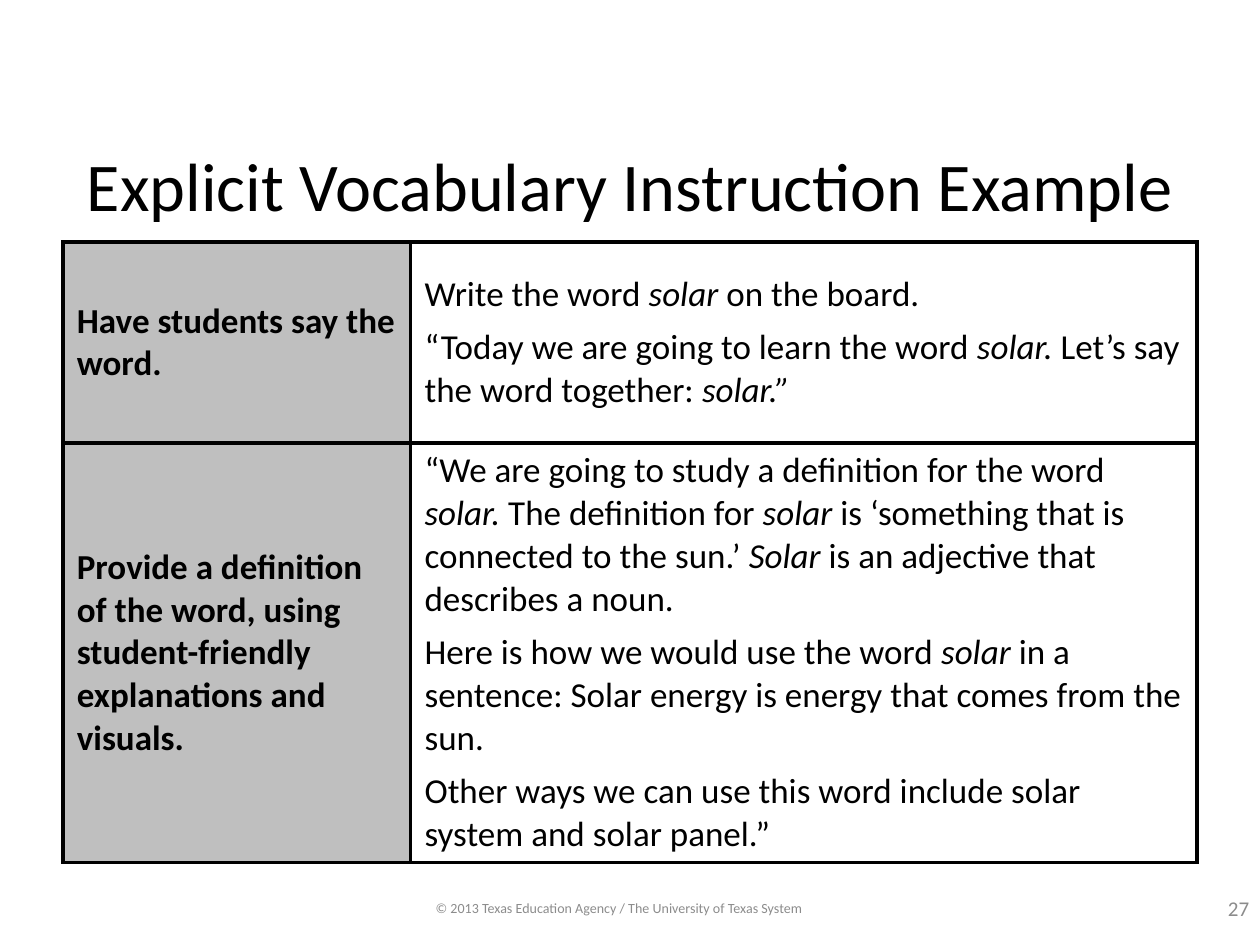
"""Build the vocabulary instruction slide: a title, a two-row table and a footer."""
from dataclasses import dataclass

from lxml import etree
from pptx import Presentation
from pptx.dml.color import RGBColor
from pptx.enum.text import MSO_ANCHOR, PP_ALIGN
from pptx.oxml.ns import qn
from pptx.util import Inches, Pt

MIDDLE = MSO_ANCHOR.MIDDLE
CENTER = PP_ALIGN.CENTER
LEFT = PP_ALIGN.LEFT


@dataclass(frozen=True)
class Theme:
    """Colours, type sizes and spacing of the slide."""
    font: str = "Calibri"
    ink: str = "000000"
    muted: str = "8C8C8C"
    label_fill: str = "BFBFBF"
    body_fill: str = "FFFFFF"
    title_size: float = 39
    body_size: float = 20
    footer_size: float = 8
    number_size: float = 12
    para_gap: float = 6
    border: float = 2.25


@dataclass(frozen=True)
class Label:
    """A centred line of text; box holds left, top, width, height as slide shares."""
    text: str
    box: tuple[float, float, float, float]
    size: float
    color: str


@dataclass(frozen=True)
class Step:
    """A table row; asterisks enclose italic words."""
    name: str
    script: tuple[str, ...]
    height: float


THEME = Theme()
WIDTH, HEIGHT = Inches(10), Inches(7.5)
TABLE_BOX = (0.05, 0.256, 0.9, 0.644)
COLUMN_SHARES = (0.276, 0.624)

LABELS = (
    Label("Explicit Vocabulary Instruction Example", (0.05, 0.139, 0.9, 0.112),
          THEME.title_size, THEME.ink),
    Label("© 2013 Texas Education Agency / The University of Texas System",
          (0.208, 0.944, 0.567, 0.033), THEME.footer_size, THEME.muted),
    Label("27", (0.958, 0.943, 0.05, 0.036), THEME.number_size, THEME.muted),
)

STEPS = (
    Step("Have students say the word.", (
        "Write the word *solar *on the board.",
        "“Today we are going to learn the word *solar. *Let’s say the word "
        "together: *solar.”*",
    ), 0.213),
    Step("Provide a definition of the word, using student-friendly explanations "
         "and visuals.", (
        "“We are going to study a definition for the word *solar. *The definition "
        "for* solar *is ‘something that is connected to the sun.’ *Solar *is an "
        "adjective that describes a noun.",
        "Here is how we would use the word *solar* in a sentence: Solar energy is "
        "energy that comes from the sun.",
        "Other ways we can use this word include solar system and solar panel.”",
    ), 0.431),
)


def place(box: tuple[float, float, float, float]) -> list[int]:
    """Turn slide shares into lengths."""
    return [round(share * side) for share, side in zip(box, (WIDTH, HEIGHT) * 2)]


def apply(target: object, formats: dict) -> None:
    """Set attributes from a dict of format values."""
    for name, value in formats.items():
        setattr(target, name, value)


def add_run(p, text: str, size: float, color: str, **style: bool) -> None:
    """Append a formatted run to a paragraph."""
    r = p.add_run()
    r.text = text
    apply(r.font, {"name": THEME.font, "size": Pt(size), **style})
    r.font.color.rgb = RGBColor.from_string(color)


def add_label(s, label: Label) -> None:
    """Add a text box holding one centred line."""
    tf = s.shapes.add_textbox(*place(label.box)).text_frame
    apply(tf, {"word_wrap": True, "vertical_anchor": MIDDLE, "margin_left": 0,
               "margin_right": 0, "margin_top": 0, "margin_bottom": 0})
    p = tf.paragraphs[0]
    p.alignment = CENTER
    add_run(p, label.text, label.size, label.color)


def add_borders(cell) -> None:
    """Draw a solid line on each side of a cell."""
    tc_pr = cell._tc.get_or_add_tcPr()
    for side in ("a:lnL", "a:lnR", "a:lnT", "a:lnB"):
        ln = etree.SubElement(tc_pr, qn(side), w=str(Pt(THEME.border)))
        fill = etree.SubElement(ln, qn("a:solidFill"))
        etree.SubElement(fill, qn("a:srgbClr"), val=THEME.ink)


def fill_cell(cell, texts: tuple[str, ...], fill: str, bold: bool) -> None:
    """Write paragraphs into a cell and set its look."""
    add_borders(cell)
    cell.fill.solid()
    cell.fill.fore_color.rgb = RGBColor.from_string(fill)
    apply(cell, {"vertical_anchor": MIDDLE,
                 "margin_left": Inches(0.11), "margin_right": Inches(0.11),
                 "margin_top": Inches(0.05), "margin_bottom": Inches(0.05)})
    tf = cell.text_frame
    for i, text in enumerate(texts):
        p = tf.add_paragraph() if i else tf.paragraphs[0]
        apply(p, {"alignment": LEFT, "space_after": Pt(THEME.para_gap)})
        for j, part in enumerate(text.split("*")):
            if part:
                add_run(p, part, THEME.body_size, THEME.ink,
                        bold=bold, italic=j % 2 == 1)


def add_steps(s, steps: tuple[Step, ...]) -> None:
    """Add the table with one row per step."""
    table = s.shapes.add_table(len(steps), len(COLUMN_SHARES),
                               *place(TABLE_BOX)).table
    apply(table, {"first_row": False, "horz_banding": False})
    for column, share in zip(table.columns, COLUMN_SHARES):
        column.width = round(share * WIDTH)
    for i, step in enumerate(steps):
        table.rows[i].height = round(step.height * HEIGHT)
        fill_cell(table.cell(i, 0), (step.name,), THEME.label_fill, True)
        fill_cell(table.cell(i, 1), step.script, THEME.body_fill, False)


def main() -> None:
    """Build and save the slide."""
    prs = Presentation()
    apply(prs, {"slide_width": WIDTH, "slide_height": HEIGHT})
    s = prs.slides.add_slide(prs.slide_layouts[6])
    add_steps(s, STEPS)
    for label in LABELS:
        add_label(s, label)
    prs.save("out.pptx")


if __name__ == "__main__":
    main()
